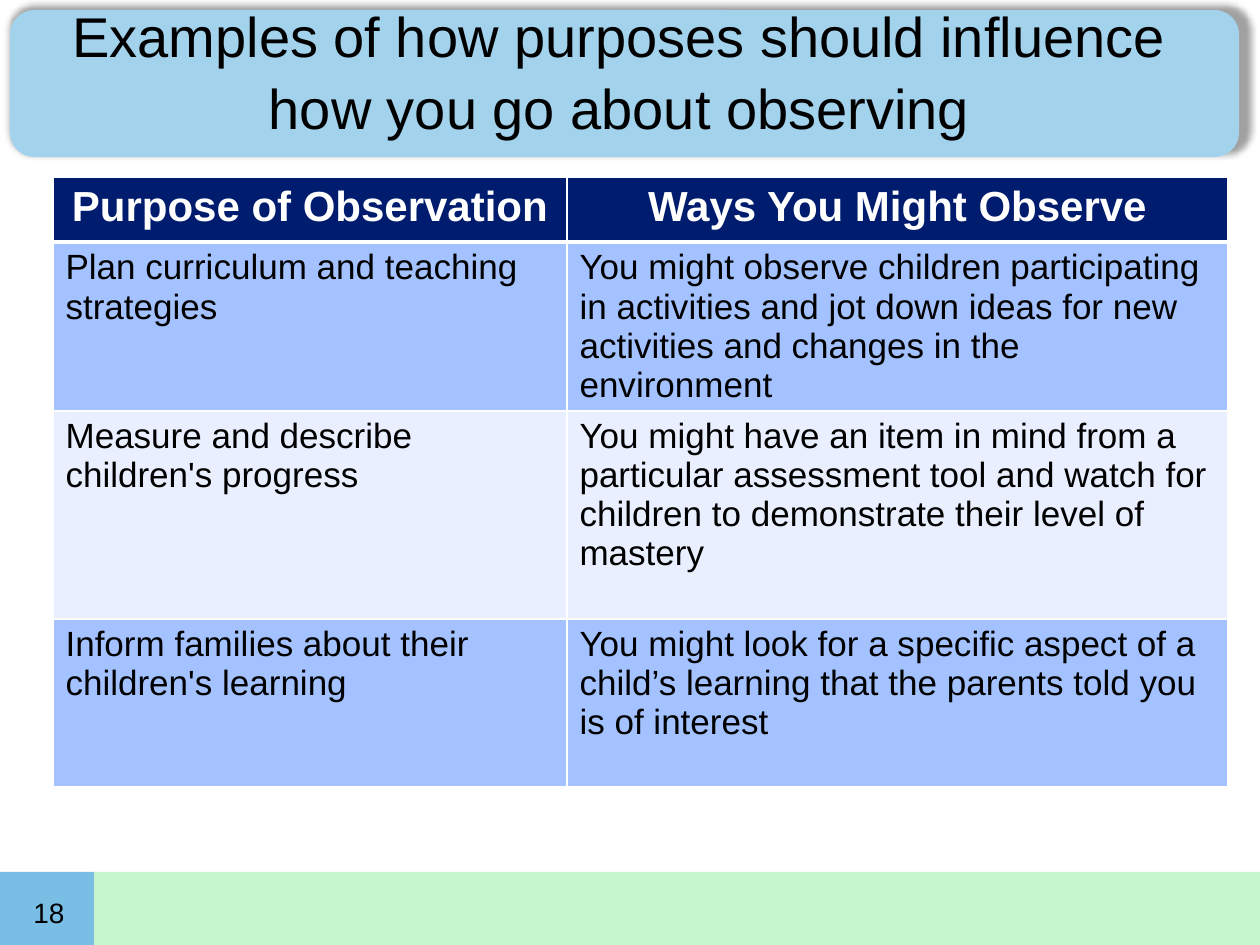
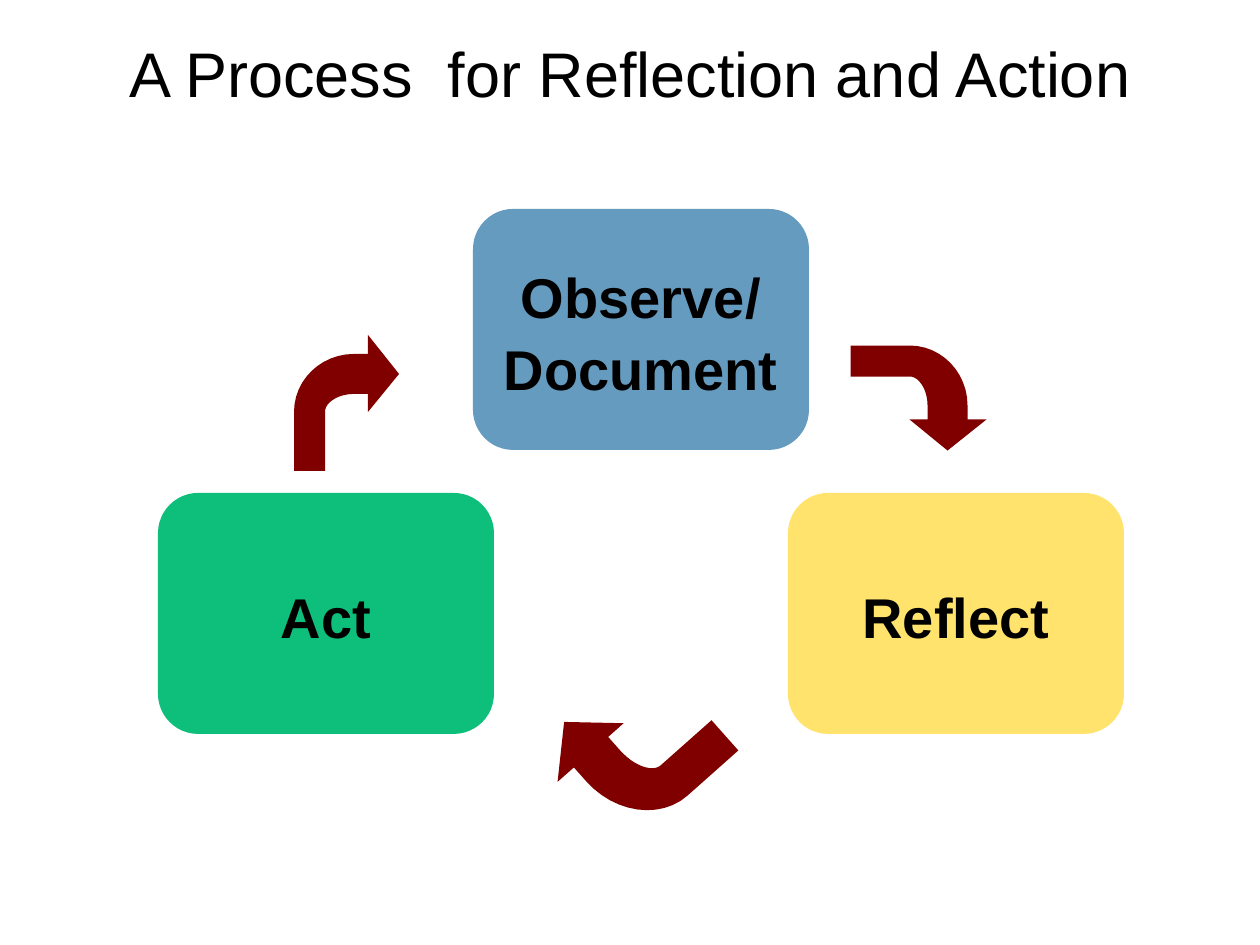
import pptx
import pptx.dml.color
import pptx.enum.shapes
import pptx.enum.text
import pptx.oxml
import pptx.oxml.ns
import pptx.util

PX = 914400 / 126
FONT = "Arial"
COLORS = {
    "black": "000000", "white": "FFFFFF", "band": "A2D2EC",
    "foot": "C6F6CD", "corner": "79BEE5", "navy": "001C6E",
    "dark": "A3C2FF", "light": "EAEFFF", "steel": "659BBF",
    "yellow": "FFE36D", "green": "0EBE7B", "maroon": "800000",
}
SHAPE = pptx.enum.shapes.MSO_SHAPE
ALIGN = pptx.enum.text.PP_ALIGN
ANCHOR = pptx.enum.text.MSO_ANCHOR
NS = pptx.oxml.ns.nsdecls("a")


def emu(px):
    return pptx.util.Emu(round(px * PX))


def color(name):
    return pptx.dml.color.RGBColor.from_string(COLORS[name])


def bend(a, b, c, d, steps=12):
    """Points on a cubic curve from a to d, without a itself."""
    for i in range(1, steps + 1):
        t = i / steps
        u = 1 - t
        yield tuple(u**3 * p + 3 * u * u * t * q + 3 * u * t * t * r + t**3 * s
                    for p, q, r, s in zip(a, b, c, d))


# Arrow that rises and turns right, in a frame of 105 by 136
ARROW = [
    (105, 39), (74, 0), (74, 19), (60, 19),
    *bend((60, 19), (27, 19), (0, 45), (0, 77)),
    (0, 136), (31, 136), (31, 77),
    *bend((31, 77), (31, 67), (45, 59), (60, 59)),
    (74, 59), (74, 77),
]


class Deck:
    def __init__(self):
        self.prs = pptx.Presentation()
        self.prs.slide_width = emu(1260)
        self.prs.slide_height = emu(945)
        self.slide = None

    def page(self):
        self.slide = self.prs.slides.add_slide(self.prs.slide_layouts[5])

    def text(self, frame, lines, size, tint="black", bold=False,
             align=ALIGN.LEFT, space=None):
        for i, line in enumerate(lines):
            para = frame.add_paragraph() if i else frame.paragraphs[0]
            para.alignment = align
            if space:
                para.line_spacing = space
            run = para.add_run()
            run.text = line
            run.font.name = FONT
            run.font.size = pptx.util.Pt(size)
            run.font.bold = bold
            run.font.color.rgb = color(tint)

    def title(self, text, x, y, w, h, size):
        shape = self.slide.shapes.title
        shape.left, shape.top, shape.width, shape.height = map(emu, (x, y, w, h))
        frame = shape.text_frame
        frame.auto_size = pptx.enum.text.MSO_AUTO_SIZE.NONE
        frame.vertical_anchor = ANCHOR.BOTTOM
        self.text(frame, [text], size, align=ALIGN.CENTER, space=1.07)
        # Bring the title in front of the bands
        shape.element.getparent().append(shape.element)

    def paint(self, shape, fill):
        shape.shadow.inherit = False
        shape.fill.solid()
        shape.fill.fore_color.rgb = color(fill)
        shape.line.fill.background()

    def box(self, x, y, w, h, fill, kind=SHAPE.RECTANGLE, lines=()):
        shape = self.slide.shapes.add_shape(kind, *map(emu, (x, y, w, h)))
        self.paint(shape, fill)
        if lines:
            frame = shape.text_frame
            frame.word_wrap = False
            frame.vertical_anchor = ANCHOR.MIDDLE
            self.text(frame, lines, 32, bold=True, align=ALIGN.CENTER, space=1.07)
        return shape

    def shade(self, shape):
        props = shape.element.spPr
        old = props.find(pptx.oxml.ns.qn("a:effectLst"))
        props.replace(old, pptx.oxml.parse_xml(
            f'<a:effectLst {NS}><a:outerShdw blurRad="50800" dist="38100" '
            'dir="15000000" sx="101000" sy="101000" algn="tl" rotWithShape="0">'
            f'<a:srgbClr val="{COLORS["black"]}"><a:alpha val="37000"/></a:srgbClr>'
            '</a:outerShdw></a:effectLst>'))

    def label(self, text, x, y, w, h, size):
        frame = self.slide.shapes.add_textbox(*map(emu, (x, y, w, h))).text_frame
        frame.word_wrap = True
        frame.vertical_anchor = ANCHOR.BOTTOM
        self.text(frame, [text], size)

    def arrow(self, x, y, w, h, turn=0):
        pts = [(emu(px * w / 105), emu(py * h / 136)) for px, py in ARROW]
        form = self.slide.shapes.build_freeform(*pts[0])
        form.add_line_segments(pts[1:], close=True)
        shape = form.convert_to_shape(emu(x), emu(y))
        shape.rotation = turn
        self.paint(shape, "maroon")

    def edge(self, cell, row):
        props = cell._tc.get_or_add_tcPr()
        thick = {"B": row == 0, "T": row == 1}
        for side in "LRTB":
            width = pptx.util.Pt(3 if thick.get(side) else 1)
            props.append(pptx.oxml.parse_xml(
                f'<a:ln{side} {NS} w="{width}"><a:solidFill>'
                f'<a:srgbClr val="{COLORS["white"]}"/></a:solidFill></a:ln{side}>'))

    def table(self, rows, x, y, cols, highs):
        grid = self.slide.shapes.add_table(
            len(rows), len(cols), *map(emu, (x, y, sum(cols), sum(highs)))).table
        for col, w in zip(grid.columns, cols):
            col.width = emu(w)
        for r, (texts, high) in enumerate(zip(rows, highs)):
            grid.rows[r].height = emu(high)
            for c, text in enumerate(texts):
                cell = grid.cell(r, c)
                self.edge(cell, r)
                cell.fill.solid()
                fill = "navy" if r == 0 else "dark" if r % 2 else "light"
                cell.fill.fore_color.rgb = color(fill)
                if r == 0:
                    self.text(cell.text_frame, [text], 24, "white", True, ALIGN.CENTER)
                else:
                    self.text(cell.text_frame, [text], 20)


def purpose(deck):
    deck.page()
    # Footer and title bands
    deck.box(94, 872, 1166, 73, "foot")
    deck.box(0, 872, 94, 73, "corner")
    deck.shade(deck.box(10, 10, 1229, 147, "band", SHAPE.ROUNDED_RECTANGLE))
    # Purposes and matching ways
    deck.table([
        ("Purpose of Observation", "Ways You Might Observe"),
        ("Plan curriculum and teaching strategies",
         "You might observe children participating in activities and jot down "
         "ideas for new activities and changes in the environment"),
        ("Measure and describe children's progress",
         "You might have an item in mind from a particular assessment tool and "
         "watch for children to demonstrate their level of mastery"),
        ("Inform families about their children's learning",
         "You might look for a specific aspect of a child’s learning that the "
         "parents told you is of interest"),
    ], 53, 177, (514, 661), (65, 168, 208, 168))
    deck.title("Examples of how purposes should influence how you go about observing",
               21, -10, 1197, 157, 32)
    deck.label("18", 21, 872, 73, 63, 16)


def process(deck):
    deck.page()
    # Arrows of the cycle, clockwise from the right
    deck.arrow(866, 330, 105, 136, 90)
    deck.arrow(566, 673, 137, 156, 228.4)
    deck.arrow(294, 335, 105, 136)
    # Steps
    for x, y, fill, lines in (
        (473, 209, "steel", ["Observe/", "Document"]),
        (788, 493, "yellow", ["Reflect"]),
        (158, 493, "green", ["Act"]),
    ):
        deck.box(x, y, 336, 241, fill, SHAPE.ROUNDED_RECTANGLE, lines)
    deck.title("A Process  for Reflection and Action", 0, 21, 1260, 95, 36)


def main():
    deck = Deck()
    purpose(deck)
    process(deck)
    deck.prs.save("out.pptx")


if __name__ == "__main__":
    main()
